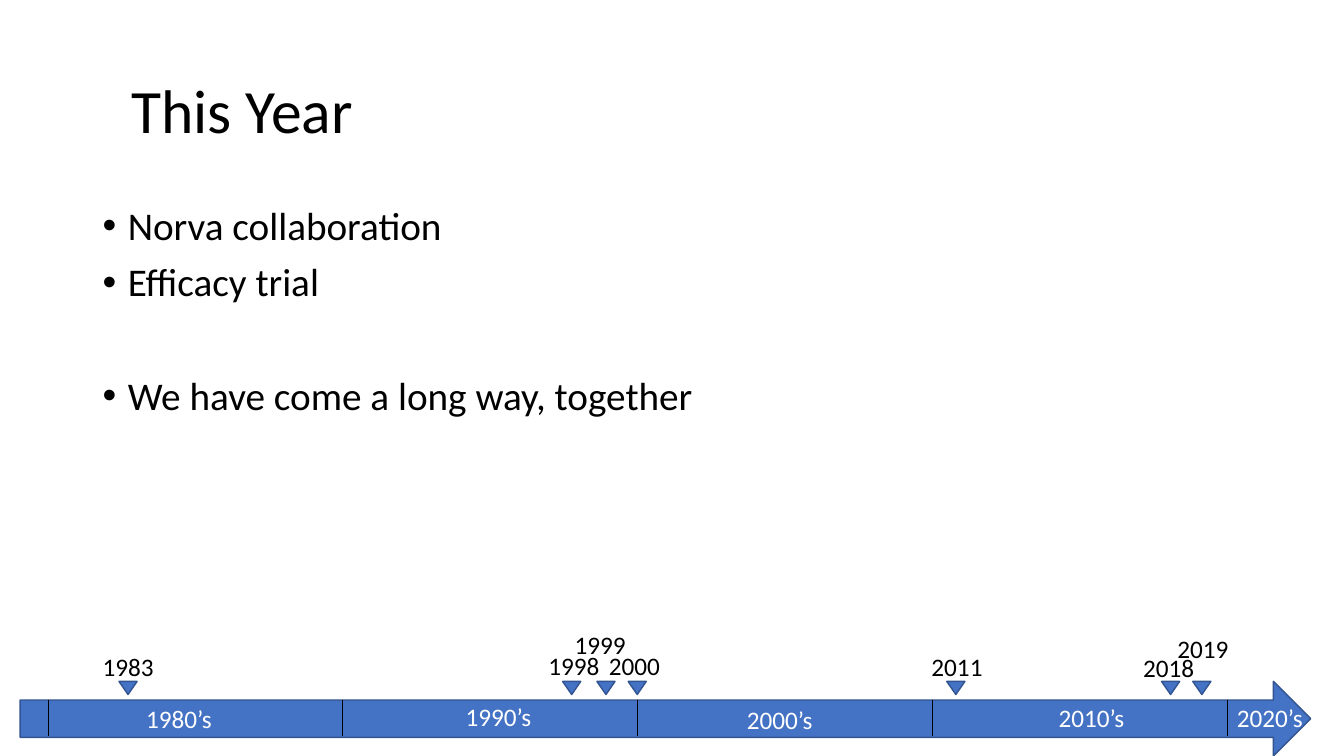
from lxml.etree import SubElement
from pptx import Presentation
from pptx.dml.color import RGBColor
from pptx.enum.shapes import MSO_CONNECTOR as CONNECTOR, MSO_SHAPE as SHAPE
from pptx.enum.text import MSO_ANCHOR as ANCHOR, MSO_AUTO_SIZE as AUTO_SIZE, PP_ALIGN as ALIGN
from pptx.oxml.ns import qn
from pptx.util import Pt

PX = 9144  # 100 px to the inch
FONT = "Calibri"
COLORS = {"text": "000000", "label": "FFFFFF", "fill": "4472C4", "outline": "325491"}

presentation = Presentation()
presentation.slide_width, presentation.slide_height = 1333 * PX, 750 * PX
slide = presentation.slides.add_slide(presentation.slide_layouts[5])
shapes = slide.shapes


def write(shape, lines, size, color):
    """Fill a text shape with left-aligned paragraphs in one style."""
    frame = shape.text_frame
    frame.text = "\n".join(lines)
    frame.word_wrap = True
    frame.auto_size = AUTO_SIZE.NONE
    for paragraph in frame.paragraphs:
        paragraph.alignment = ALIGN.LEFT
        font = paragraph.runs[0].font
        font.name, font.size = FONT, Pt(size)
        font.color.rgb = RGBColor.from_string(COLORS[color])
    return frame


def add_blue_shape(kind, left, top, width, height):
    shape = shapes.add_shape(kind, left * PX, top * PX, width * PX, height * PX)
    shape.shadow.inherit = False
    shape.fill.solid()
    shape.fill.fore_color.rgb = RGBColor.from_string(COLORS["fill"])
    shape.line.color.rgb = RGBColor.from_string(COLORS["outline"])
    shape.line.width = Pt(1)
    return shape


# Title
title = shapes.title
title.left, title.top, title.width, title.height = 92 * PX, 40 * PX, 1150 * PX, 145 * PX
title_frame = write(title, ["This Year"], 44, "text")
title_frame.margin_left = 38 * PX
title_frame.vertical_anchor = ANCHOR.MIDDLE
title_frame.paragraphs[0].line_spacing = 0.9

# Bullets, with a wider gap before the closing line
bullets = {"Norva collaboration": 10, "Efficacy trial": 10, "We have come a long way, together": 51}
body = shapes.add_textbox(92 * PX, 200 * PX, 667 * PX, 328 * PX)
body_frame = write(body, bullets, 28, "text")
for paragraph, space_before in zip(body_frame.paragraphs, bullets.values()):
    paragraph.line_spacing = 0.9
    paragraph.space_before = Pt(space_before)
    properties = paragraph._p.get_or_add_pPr()
    properties.set("marL", str(25 * PX))
    properties.set("indent", str(-25 * PX))
    SubElement(properties, qn("a:buFont"), typeface="Arial")
    SubElement(properties, qn("a:buChar"), char="•")

# Timeline arrow
add_blue_shape(SHAPE.RIGHT_ARROW, 20, 676, 1280, 74)

# Decade dividers at equal steps
for index in range(5):
    x = round(48 + index * 292.25) * PX
    divider = shapes.add_connector(CONNECTOR.STRAIGHT, x, 694 * PX, x, 730 * PX)
    divider.line.color.rgb = RGBColor.from_string(COLORS["text"])
    divider.line.width = Pt(0.5)
    SubElement(divider._element.spPr, qn("a:effectLst"))

# Decade labels: text, left, top
decades = [
    ("1980’s", 135, 693),
    ("1990’s", 452, 691),
    ("2000’s", 731, 694),
    ("2010’s", 1040, 692),
    ("2020’s", 1217, 692),
]
for decade, left, top in decades:
    label = shapes.add_textbox(left * PX, top * PX, 108 * PX, 40 * PX)
    write(label, [decade], 18, "label")

# Year markers: text, marker left, label left, label top
years = [
    ("1983", 118, 92, 641),
    ("1998", 558, 534, 640),
    ("1999", 592, 560, 619),
    ("2000", 623, 594, 640),
    ("2011", 939, 914, 641),
    ("2018", 1152, 1124, 642),
    ("2019", 1183, 1158, 623),
]
for year, marker_left, label_left, label_top in years:
    marker = add_blue_shape(SHAPE.ISOSCELES_TRIANGLE, marker_left, 676, 18, 13)
    marker.rotation = 180
    label = shapes.add_textbox(label_left * PX, label_top * PX, 82 * PX, 40 * PX)
    write(label, [year], 18, "text")

presentation.save("out.pptx")
